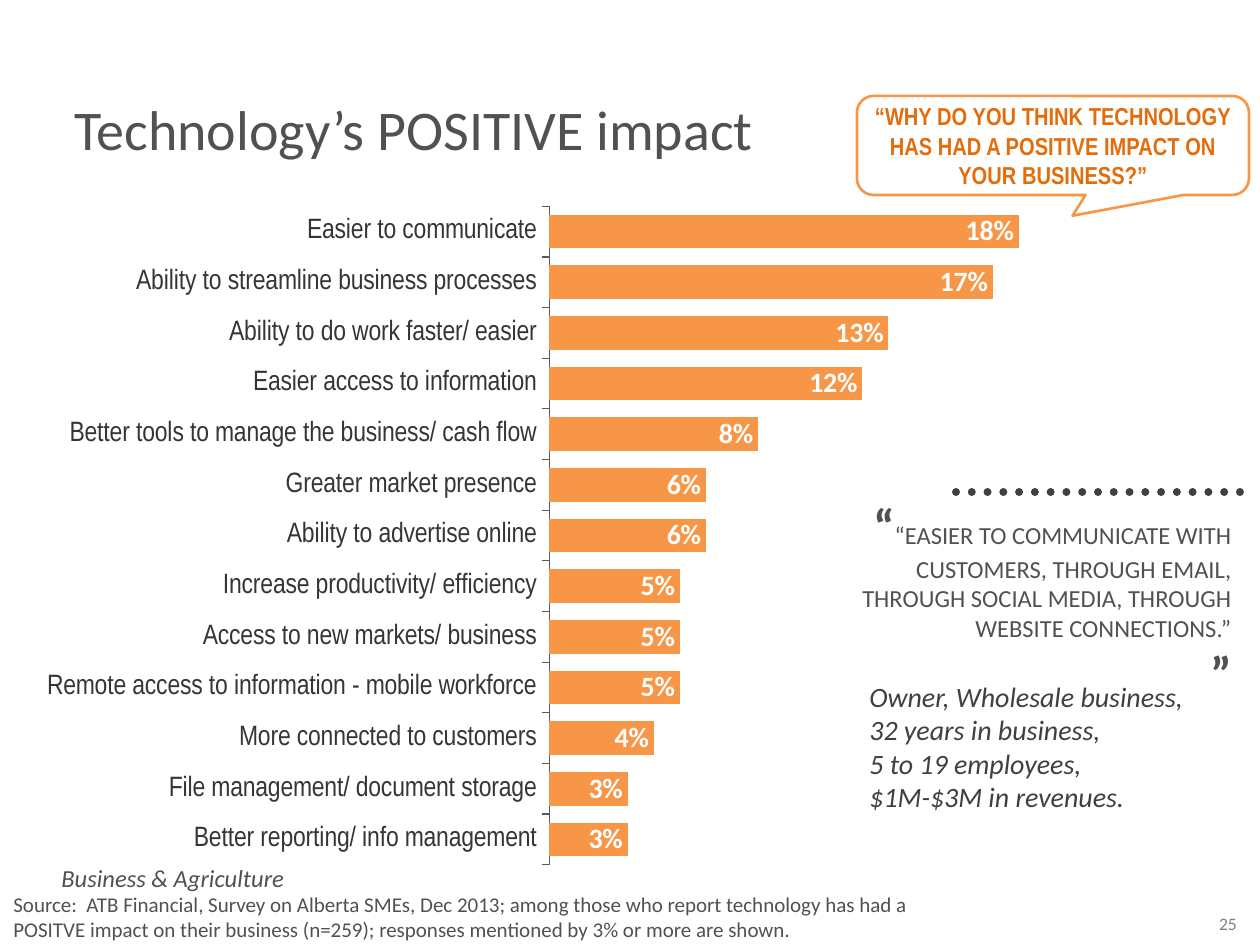
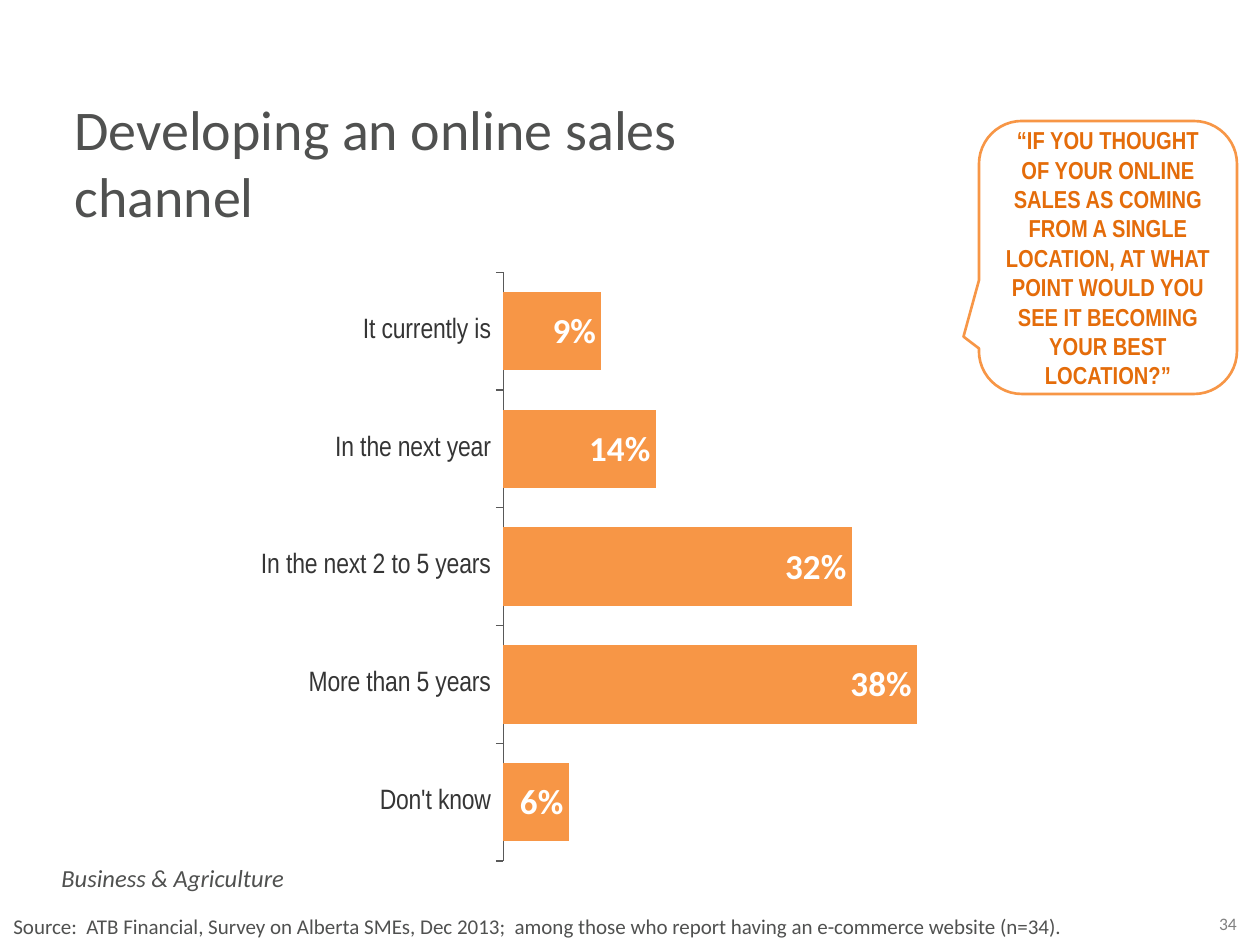
from lxml import etree
from pptx import Presentation
from pptx import util as u
from pptx.chart.data import CategoryChartData
from pptx.dml.color import RGBColor
from pptx.enum import chart as ch
from pptx.enum import dml, shapes, text
from pptx.oxml.ns import qn

PX_PER_INCH = 126
SLIDE_SIZE = (1260, 945)
ORANGE, DEEP_ORANGE = "F79646", "E46C0A"
GREY, DARK, INK, PALE, AXIS = "505150", "404040", "353535", "808080", "595959"
BODY, NARROW = "Calibri", "Arial Narrow"
LEFT, CENTER, RIGHT = text.PP_ALIGN.LEFT, text.PP_ALIGN.CENTER, text.PP_ALIGN.RIGHT

TAGLINE = "Business & Agriculture"
PLOT = {"x": 0.6, "y": 0.052, "w": 0.4, "h": 0.92}

SLIDES = [
    {
        "page": "25",
        "title": ("Technology’s POSITIVE impact", (62, 88, 1182, 81)),
        "answers": [
            ("Easier to communicate", 0.18),
            ("Ability to streamline business processes", 0.17),
            ("Ability to do work faster/ easier", 0.13),
            ("Easier access to information", 0.12),
            ("Better tools to manage the business/ cash flow", 0.08),
            ("Greater market presence", 0.06),
            ("Ability to advertise online", 0.06),
            ("Increase productivity/ efficiency", 0.05),
            ("Access to new markets/ business", 0.05),
            ("Remote access to information - mobile workforce", 0.05),
            ("More connected to customers", 0.04),
            ("File management/ document storage", 0.03),
            ("Better reporting/ info management", 0.03),
        ],
        "chart": {"box": (-233, 169, 1304, 716), "top_value": 0.2, "label_size": 16},
        "question": (
            "“WHY DO YOU THINK TECHNOLOGY HAS HAD A POSITIVE IMPACT ON YOUR BUSINESS?”",
            (857, 96, 392, 99), (0.05, 0.71)),
        "source": (
            "Source:  ATB Financial, Survey on Alberta SMEs, Dec 2013; among those who "
            "report technology has had a POSITVE impact on their business (n=259); "
            "responses mentioned by 3% or more are shown.",
            (1, 885, 930, 63)),
        "quote": {
            "rule": (956, 492, 1242, 492),
            "words": ("“EASIER TO COMMUNICATE WITH CUSTOMERS, THROUGH EMAIL, THROUGH "
                      "SOCIAL MEDIA, THROUGH WEBSITE CONNECTIONS.”"),
            "words_box": (828, 489, 416, 220),
            "speaker": ["Owner, Wholesale business,", "32 years in business,",
                        "5 to 19 employees,", "$1M-$3M in revenues."],
            "speaker_box": (857, 673, 387, 149),
        },
    },
    {
        "page": "34",
        "title": ("Developing an online sales channel", (62, 88, 803, 149)),
        "answers": [
            ("It currently is", 0.09),
            ("In the next year", 0.14),
            ("In the next 2 to 5 years", 0.32),
            ("More than 5 years", 0.38),
            ("Don't know", 0.06),
        ],
        "chart": {"box": (-150, 239, 1089, 640), "top_value": 0.4, "label_size": 20},
        "question": (
            "“IF YOU THOUGHT OF YOUR ONLINE SALES AS COMING FROM A SINGLE LOCATION, "
            "AT WHAT POINT WOULD YOU SEE IT BECOMING YOUR BEST LOCATION?”",
            (979, 121, 258, 273), (-0.56, 0.29)),
        "source": (
            "Source:  ATB Financial, Survey on Alberta SMEs, Dec 2013;  among those who "
            "report having an e-commerce website (n=34).",
            (1, 907, 1134, 38)),
    },
]


def px(*lengths):
    return [u.Emu(round(n * 914400 / PX_PER_INCH)) for n in lengths]


def rgb(color):
    return RGBColor.from_string(color)


def style(font, size, color, name=BODY, bold=False, italic=False):
    font.size, font.name, font.bold, font.italic = u.Pt(size), name, bold, italic
    font.color.rgb = rgb(color)


def write(frame, paragraphs, align=LEFT):
    """Fill a frame; each paragraph is a list of (words, font options) runs."""
    frame.word_wrap = True
    for i, runs in enumerate(paragraphs):
        paragraph = frame.paragraphs[0] if i == 0 else frame.add_paragraph()
        paragraph.alignment = align
        for words, look in runs:
            run = paragraph.add_run()
            run.text = words
            style(run.font, **look)


def add_text(slide, box, paragraphs, align=LEFT):
    write(slide.shapes.add_textbox(*px(*box)).text_frame, paragraphs, align)


def add_line_of_text(slide, words, box, size, color, align=LEFT, italic=False):
    look = {"size": size, "color": color, "italic": italic}
    add_text(slide, box, [[(words, look)]], align)


def place_plot(chart):
    """Fix the inner plot area at the shared fractions of the chart."""
    area = chart._chartSpace.chart.plotArea
    for old in area.findall(qn("c:layout")):
        area.remove(old)
    layout = etree.Element(qn("c:layout"))
    manual = etree.SubElement(layout, qn("c:manualLayout"))
    settings = {"layoutTarget": "inner", "xMode": "edge", "yMode": "edge", **PLOT}
    for tag, value in settings.items():
        etree.SubElement(manual, qn("c:" + tag)).set("val", str(value))
    area.insert(0, layout)


def add_bars(slide, answers, box, top_value, label_size):
    data = CategoryChartData(number_format="0%")
    bottom_up = answers[::-1]
    data.categories = [answer for answer, _ in bottom_up]
    data.add_series("Series 1", [share for _, share in bottom_up])
    chart = slide.shapes.add_chart(
        ch.XL_CHART_TYPE.BAR_STACKED, *px(*box), data).chart
    chart.has_legend = chart.has_title = False
    style(chart.font, 14, INK, bold=True)
    place_plot(chart)

    plot = chart.plots[0]
    plot.gap_width, plot.overlap, plot.vary_by_categories = 50, 100, False
    fill = plot.series[0].format.fill
    fill.solid()
    fill.fore_color.rgb = rgb(ORANGE)
    plot.has_data_labels = True
    labels = plot.data_labels
    labels.show_value = True
    labels.position = ch.XL_LABEL_POSITION.INSIDE_END
    labels.number_format, labels.number_format_is_linked = "0%", False
    style(labels.font, label_size, "FFFFFF", bold=True)

    shares = chart.value_axis
    shares.minimum_scale, shares.maximum_scale = 0, top_value
    shares.has_major_gridlines = shares.visible = False
    names = chart.category_axis
    names.major_tick_mark = ch.XL_TICK_MARK.OUTSIDE
    names.format.line.color.rgb = rgb(AXIS)
    names.format.line.width = u.Pt(0.75)
    style(names.tick_labels.font, 16, INK, NARROW)


def add_question(slide, words, box, tip):
    bubble = slide.shapes.add_shape(
        shapes.MSO_SHAPE.ROUNDED_RECTANGULAR_CALLOUT, *px(*box))
    bubble.adjustments[0], bubble.adjustments[1] = tip
    bubble.shadow.inherit = False
    bubble.fill.background()
    bubble.line.color.rgb = rgb(ORANGE)
    bubble.line.width = u.Pt(1.5)
    bubble.text_frame.vertical_anchor = text.MSO_ANCHOR.MIDDLE
    look = {"size": 14, "color": DEEP_ORANGE, "name": NARROW, "bold": True}
    write(bubble.text_frame, [[(words, look)]], CENTER)


def add_quote(slide, rule, words, words_box, speaker, speaker_box):
    dots = slide.shapes.add_connector(shapes.MSO_CONNECTOR.STRAIGHT, *px(*rule))
    dots.line.color.rgb = rgb(DARK)
    dots.line.width = u.Pt(4.5)
    dots.line.dash_style = dml.MSO_LINE.ROUND_DOT
    dots.line._get_or_add_ln().set("cap", "rnd")
    etree.SubElement(dots._element.spPr, qn("a:effectLst"))

    mark = {"size": 28, "color": GREY, "bold": True}
    plain = {"size": 14, "color": GREY}
    add_text(slide, words_box, [[("“", mark), (words, plain)], [("”", mark)]], RIGHT)
    look = {"size": 16, "color": DARK, "italic": True}
    add_text(slide, speaker_box, [[(detail, look)] for detail in speaker])


def main():
    deck = Presentation()
    deck.slide_width, deck.slide_height = px(*SLIDE_SIZE)
    for content in SLIDES:
        slide = deck.slides.add_slide(deck.slide_layouts[6])
        add_line_of_text(slide, content["page"], (1197, 907, 62, 34), 10, PALE, CENTER)
        add_line_of_text(slide, TAGLINE, (49, 857, 354, 43), 14, GREY, italic=True)
        add_line_of_text(slide, *content["title"], 32, GREY)
        add_bars(slide, content["answers"], **content["chart"])
        if "quote" in content:
            add_quote(slide, **content["quote"])
        add_line_of_text(slide, *content["source"], 12, GREY)
        add_question(slide, *content["question"])
    deck.save("out.pptx")


if __name__ == "__main__":
    main()
